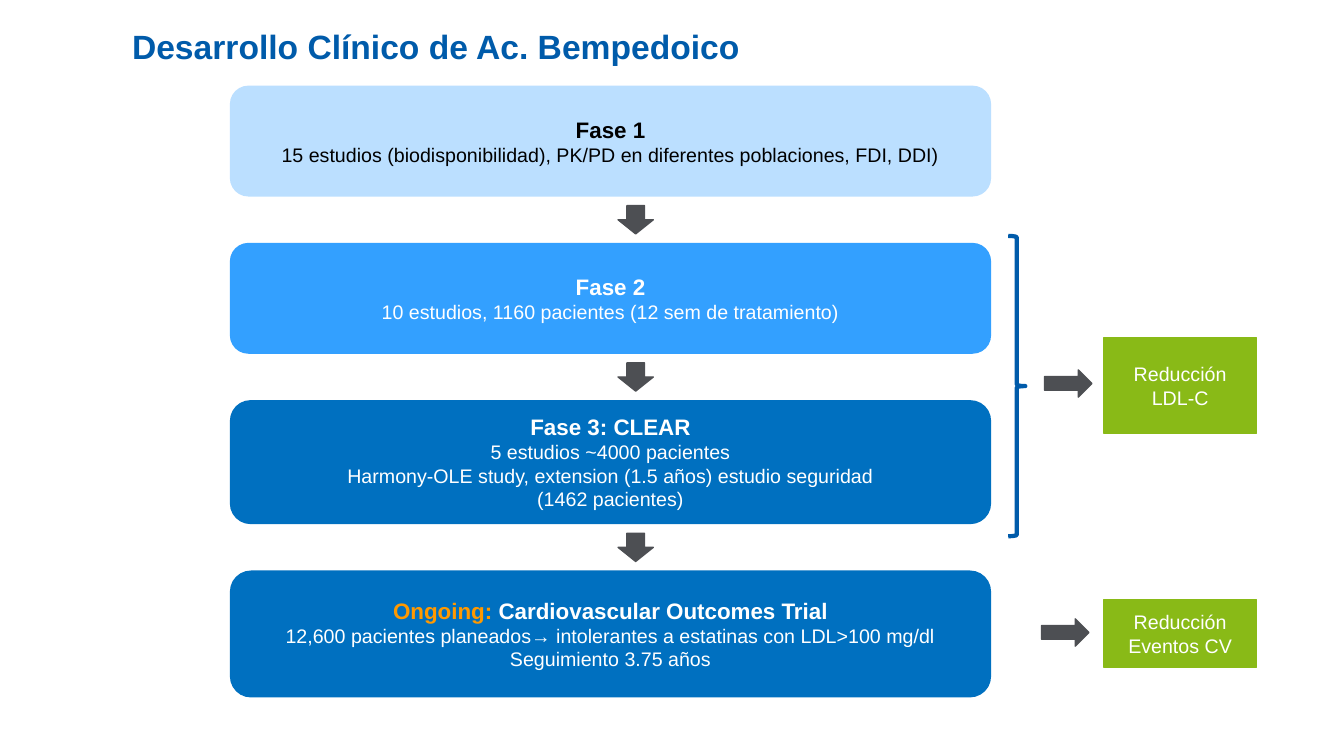
"""Build the clinical development slide for bempedoic acid."""
from pptx import Presentation
from pptx.dml.color import RGBColor
from pptx.enum.shapes import MSO_SHAPE
from pptx.enum.text import MSO_ANCHOR, PP_ALIGN
from pptx.util import Inches, Pt

FONT = "Arial"
WHITE = RGBColor(0xFF, 0xFF, 0xFF)
BLACK = RGBColor(0x00, 0x00, 0x00)
TITLE_BLUE = RGBColor(0x00, 0x5B, 0xAA)
PALE_BLUE = RGBColor(0xBB, 0xDF, 0xFF)
BRIGHT_BLUE = RGBColor(0x33, 0xA0, 0xFF)
DEEP_BLUE = RGBColor(0x00, 0x70, 0xC0)
ORANGE = RGBColor(0xFF, 0x99, 0x00)
GREEN = RGBColor(0x89, 0xBA, 0x17)
GREY = RGBColor(0x4D, 0x4F, 0x53)

PHASE_LEFT, PHASE_WIDTH, PHASE_TOP, PHASE_GAP = 2.28, 7.55, 0.85, 0.46
PHASES = [
    (1.1, PALE_BLUE, BLACK, [("Fase 1", BLACK)],
     ["15 estudios (biodisponibilidad), PK/PD en diferentes poblaciones, FDI, DDI)"]),
    (1.1, BRIGHT_BLUE, WHITE, [("Fase 2", WHITE)],
     ["10 estudios, 1160 pacientes (12 sem de tratamiento)"]),
    (1.23, DEEP_BLUE, WHITE, [("Fase 3: CLEAR", WHITE)],
     ["5 estudios ~4000 pacientes\n"
      "Harmony-OLE study, extension (1.5 años) estudio seguridad",
      "(1462 pacientes)"]),
    (1.26, DEEP_BLUE, WHITE,
     [("Ongoing: ", ORANGE), ("Cardiovascular Outcomes Trial", WHITE)],
     ["12,600 pacientes planeados→ intolerantes a estatinas con LDL>100 mg/dl",
      "Seguimiento 3.75 años"]),
]
OUTCOMES = [
    ("Reducción LDL-C", 3.35, 0.95, 10.36, 3.67),
    ("Reducción Eventos CV", 5.95, 0.67, 10.33, 6.14),
]


def format_runs(paragraph, size, color, bold=False):
    """Apply one font style to every run of a paragraph."""
    for run in paragraph.runs:
        run.font.name = FONT
        run.font.size = Pt(size)
        run.font.bold = bold
        run.font.color.rgb = color


def add_block(slide, preset, left, top, width, height, fill=None, line=None, weight=1):
    """Add a flat preset shape with an optional fill and outline."""
    block = slide.shapes.add_shape(
        preset, Inches(left), Inches(top), Inches(width), Inches(height))
    block.shadow.inherit = False
    if fill is None:
        block.fill.background()
    else:
        block.fill.solid()
        block.fill.fore_color.rgb = fill
    if line is None:
        block.line.fill.background()
    else:
        block.line.color.rgb = line
        block.line.width = Pt(weight)
    return block


def add_title(slide, text):
    """Add the slide heading."""
    title = slide.shapes.add_textbox(
        Inches(1.23), Inches(0.22), Inches(12.1), Inches(0.52))
    frame = title.text_frame
    frame.word_wrap = True
    frame.vertical_anchor = MSO_ANCHOR.BOTTOM
    frame.margin_left = frame.margin_right = Inches(0.08)
    frame.margin_top = frame.margin_bottom = Inches(0.08)
    frame.text = text
    frame.paragraphs[0].line_spacing = 0.9
    format_runs(frame.paragraphs[0], 24, TITLE_BLUE, bold=True)


def add_phase(slide, top, height, fill, color, heading, details):
    """Add a rounded phase box with a bold heading and its details."""
    phase = add_block(slide, MSO_SHAPE.ROUNDED_RECTANGLE,
                      PHASE_LEFT, top, PHASE_WIDTH, height, fill)
    frame = phase.text_frame
    frame.word_wrap = True
    frame.vertical_anchor = MSO_ANCHOR.MIDDLE
    frame.margin_left = frame.margin_right = Inches(0.08)
    first = frame.paragraphs[0]
    first.alignment = PP_ALIGN.CENTER
    for text, run_color in heading:
        run = first.add_run()
        run.text = text
        run.font.name = FONT
        run.font.size = Pt(16)
        run.font.bold = True
        run.font.color.rgb = run_color
    for detail in details:
        paragraph = frame.add_paragraph()
        paragraph.text = detail
        paragraph.alignment = PP_ALIGN.CENTER
        format_runs(paragraph, 14, color)


def add_outcome(slide, text, top, height, arrow_left, arrow_top):
    """Add a green outcome box and the arrow that points to it."""
    outcome = add_block(slide, MSO_SHAPE.RECTANGLE, 10.95, top, 1.51, height, GREEN, GREEN)
    frame = outcome.text_frame
    frame.word_wrap = True
    frame.vertical_anchor = MSO_ANCHOR.MIDDLE
    frame.text = text
    frame.paragraphs[0].alignment = PP_ALIGN.CENTER
    format_runs(frame.paragraphs[0], 14, WHITE)
    add_block(slide, MSO_SHAPE.RIGHT_ARROW, arrow_left, arrow_top, 0.47, 0.27, GREY, GREY)


def main():
    """Build and save the slide."""
    deck = Presentation()
    deck.slide_width, deck.slide_height = Inches(13.33), Inches(7.5)
    slide = deck.slides.add_slide(deck.slide_layouts[6])
    add_title(slide, "Desarrollo Clínico de Ac. Bempedoico")

    top = PHASE_TOP
    for index, (height, *content) in enumerate(PHASES):
        if index:
            add_block(slide, MSO_SHAPE.DOWN_ARROW, 6.13, top - PHASE_GAP + 0.09,
                      0.35, 0.28, GREY, GREY)
        add_phase(slide, top, height, *content)
        top += height + PHASE_GAP

    add_block(slide, MSO_SHAPE.RIGHT_BRACE, 10, 2.34, 0.17, 2.98,
              line=TITLE_BLUE, weight=3)
    for outcome in OUTCOMES:
        add_outcome(slide, *outcome)
    deck.save("out.pptx")


if __name__ == "__main__":
    main()
